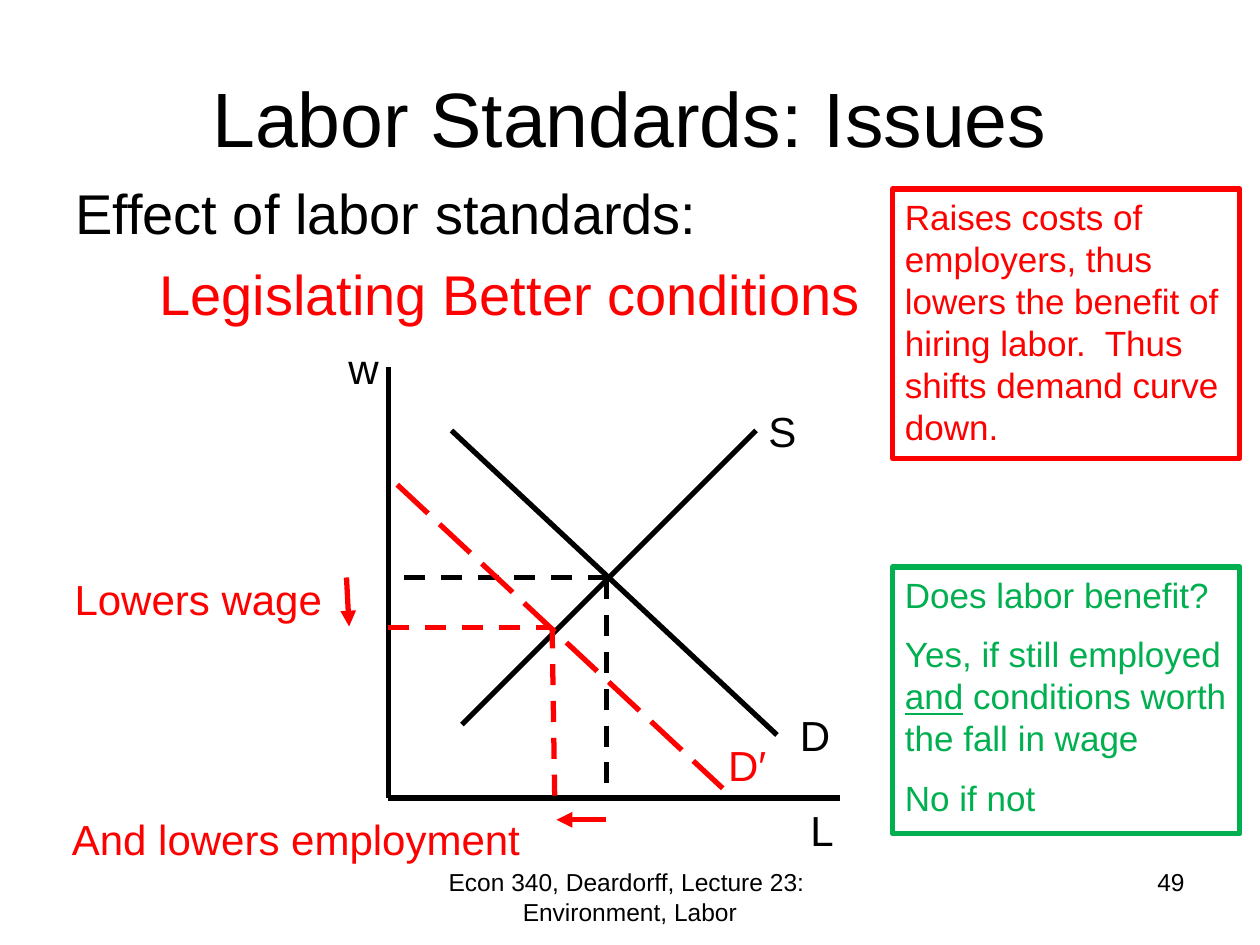
from lxml import etree
from pptx import Presentation
from pptx.dml.color import RGBColor
from pptx.enum import dml, shapes, text
from pptx.oxml import ns
from pptx.util import Pt

BLACK, RED, GREEN = "000000", "FF0000", "00B050"
LEFT, MID, RIGHT = text.PP_ALIGN.LEFT, text.PP_ALIGN.CENTER, text.PP_ALIGN.RIGHT
DASH, LONG = dml.MSO_LINE.DASH, dml.MSO_LINE.LONG_DASH


def rgb(code):
    return RGBColor.from_string(code)


def style(para, size, color, align=LEFT):
    para.alignment = align
    para.font.size = Pt(size)
    para.font.name = "Arial"
    para.font.color.rgb = rgb(color)


def write(slide, words, box, size, color=BLACK, align=LEFT, wrap=True):
    frame = slide.shapes.add_textbox(*map(Pt, box)).text_frame
    frame.word_wrap = wrap
    frame.text = words
    style(frame.paragraphs[0], size, color, align)
    return frame


def draw(slide, start, end, color=BLACK, dash=None, arrow=False):
    line = slide.shapes.add_connector(
        shapes.MSO_CONNECTOR.STRAIGHT, *map(Pt, (*start, *end)))
    line.line.color.rgb = rgb(color)
    line.line.width = Pt(3)
    if dash:
        line.line.dash_style = dash
    if arrow:
        tail = etree.SubElement(line.line._get_or_add_ln(), ns.qn("a:tailEnd"))
        tail.set("type", "triangle")
    etree.SubElement(line._element.spPr, ns.qn("a:effectLst"))


def head(slide, box):
    title = slide.shapes.title
    title.left, title.top, title.width, title.height = map(Pt, box)
    frame = title.text_frame
    frame.text = "Labor Standards: Issues"
    frame.vertical_anchor = text.MSO_ANCHOR.MIDDLE
    style(frame.paragraphs[0], 44, BLACK, MID)


def intro(slide, box):
    frame = write(slide, "Effect of labor standards:", box, 32)
    para = frame.add_paragraph()
    para.text = "Legislating Better conditions"
    para.space_before = Pt(8)
    style(para, 32, RED)
    para._p.get_or_add_pPr().set("marL", str(Pt(48)))


def graph(slide, left, top):
    """Supply and demand for labor, with the shifted demand curve."""
    lines = [
        ((30, 18), (30, 264)),
        ((30, 264), (288, 264)),
        ((72, 222), (240, 54)),
        ((66, 54), (252, 228)),
        ((156, 138), (30, 138), BLACK, DASH),
        ((154.5, 138.5), (154.5, 263), BLACK, DASH),
        ((6, 138), (7.5, 166), RED, None, True),
        ((154.5, 276.5), (126, 276.5), RED, None, True),
        ((123.5, 166.5), (125, 265), RED, DASH),
        ((30, 166.5), (123.5, 166.5), RED, DASH),
        ((35, 85), (221, 258.5), RED, LONG),
    ]
    for (x1, y1), (x2, y2), *look in lines:
        draw(slide, (left + x1, top + y1), (left + x2, top + y2), *look)
    labels = [("w", 0, 0, BLACK), ("S", 240, 36, BLACK), ("D", 258, 210, BLACK),
              ("D′", 217, 227, RED), ("L", 264, 264, BLACK)]
    for word, x, y, color in labels:
        write(slide, word, (left + x, top + y, 66, 36), 24, color)


def note(slide, box, color, paras):
    """Framed comment; each paragraph is a list of runs, '_' marks underline."""
    shape = slide.shapes.add_shape(shapes.MSO_SHAPE.RECTANGLE, *map(Pt, box))
    shape.shadow.inherit = False
    shape.fill.background()
    shape.line.color.rgb = rgb(color)
    shape.line.width = Pt(3)
    frame = shape.text_frame
    frame.word_wrap = True
    frame.vertical_anchor = text.MSO_ANCHOR.TOP
    for i, runs in enumerate(paras):
        para = frame.add_paragraph() if i else frame.paragraphs[0]
        style(para, 20, color)
        if i:
            para.space_before = Pt(10)
        for words in runs:
            run = para.add_run()
            run.text = words.strip("_")
            if words.startswith("_"):
                run.font.underline = True


def foot(slide, top):
    write(slide, "Econ 340, Deardorff, Lecture 23:  Environment, Labor",
          (246, top, 228, 37.5), 14, BLACK, MID)
    write(slide, "49", (516, top, 168, 37.5), 14, BLACK, RIGHT)


def main():
    deck = Presentation()
    deck.slide_width, deck.slide_height = Pt(720), Pt(540)
    slide = deck.slides.add_slide(deck.slide_layouts[5])
    foot(slide, 492)
    head(slide, (36, 21.5, 648, 90))
    intro(slide, (36, 98.5, 648, 384))
    write(slide, "Lowers wage", (35.5, 324, 156, 36), 24, RED, wrap=False)
    write(slide, "And lowers employment", (34, 461.5, 271, 36), 24, RED, wrap=False)
    graph(slide, 192, 192)
    note(slide, (510, 108, 198.5, 154), RED, [
        ["Raises costs of employers, thus lowers the benefit of hiring labor.  "
         "Thus shifts demand curve down."]])
    note(slide, (510, 324, 198.5, 152.5), GREEN, [
        ["Does labor benefit?"],
        ["Yes, if still employed ", "_and_", " conditions worth the fall in wage"],
        ["No if not"]])
    deck.save("out.pptx")


if __name__ == "__main__":
    main()
